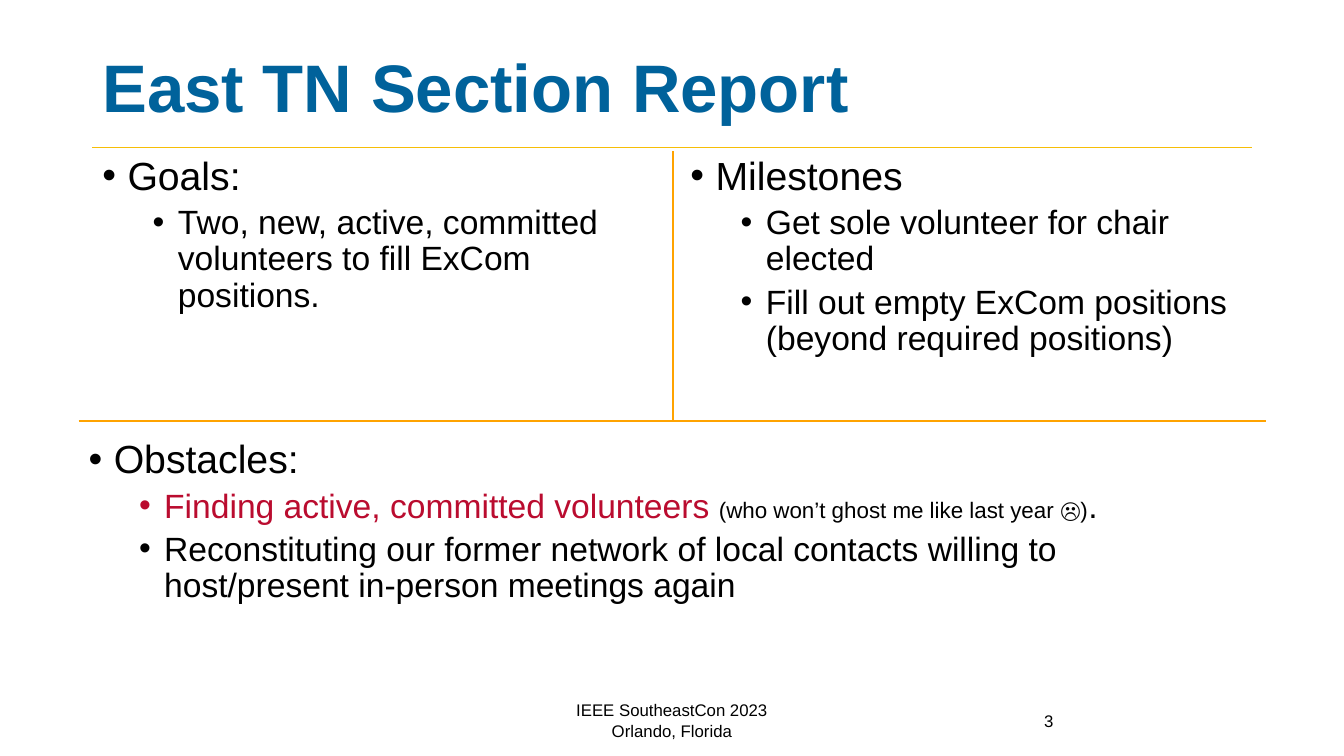
import dataclasses

import lxml.etree
import pptx
import pptx.dml.color
import pptx.enum.shapes
import pptx.enum.text
import pptx.oxml.ns
import pptx.util

EMU_PER_PX = 9525  # 96 px to the inch
ALIGN = pptx.enum.text.PP_ALIGN
ANCHOR = pptx.enum.text.MSO_ANCHOR


@dataclasses.dataclass(frozen=True)
class Theme:
    font: str = "Arial"
    title_color: str = "00629B"
    text_color: str = "000000"
    alert_color: str = "BA0C2F"
    title_rule: str = "F6BE07"
    divider: str = "FFA300"
    title_size: int = 48
    heading_size: int = 28
    item_size: int = 24
    aside_size: int = 16
    footer_size: int = 12


def px(length):
    return pptx.util.Emu(length * EMU_PER_PX)


def apply(target, values):
    for name, value in values.items():
        setattr(target, name, value)


class ReportSlide:
    def __init__(self, deck, theme):
        self.theme = theme
        self.slide = deck.slides.add_slide(deck.slide_layouts[5])

    def add_run(self, paragraph, text, size, color=None, bold=False):
        run = paragraph.add_run()
        run.text = text
        apply(run.font, {"name": self.theme.font, "size": pptx.util.Pt(size), "bold": bold})
        run.font.color.rgb = pptx.dml.color.RGBColor.from_string(color or self.theme.text_color)

    def title(self, text, left, top, width, height):
        heading = self.slide.shapes.title
        apply(heading, {"left": px(left), "top": px(top), "width": px(width), "height": px(height)})
        apply(heading.text_frame, {"word_wrap": True, "vertical_anchor": ANCHOR.MIDDLE,
                                   "auto_size": pptx.enum.text.MSO_AUTO_SIZE.NONE})
        line = heading.text_frame.paragraphs[0]
        apply(line, {"alignment": ALIGN.LEFT, "line_spacing": 0.9})
        self.add_run(line, text, self.theme.title_size, self.theme.title_color, bold=True)

    def text_frame(self, left, top, width, height, anchor):
        frame = self.slide.shapes.add_textbox(px(left), px(top), px(width), px(height)).text_frame
        apply(frame, {"word_wrap": True, "vertical_anchor": anchor})
        return frame

    def bullet(self, paragraph, level):
        properties = paragraph._p.get_or_add_pPr()
        properties.set("marL", str(px(24 + 48 * level)))
        properties.set("indent", str(px(-24)))
        for tag, key, value in (("a:buFont", "typeface", self.theme.font), ("a:buChar", "char", "•")):
            lxml.etree.SubElement(properties, pptx.oxml.ns.qn(tag)).set(key, value)
        apply(paragraph, {"level": level, "line_spacing": 0.9})

    def topic(self, heading, items, left, top, width, height):
        """Add a bulleted heading; each item is a list of (text, size, color) runs."""
        frame = self.text_frame(left, top, width, height, ANCHOR.TOP)
        first = frame.paragraphs[0]
        self.bullet(first, 0)
        self.add_run(first, heading, self.theme.heading_size)
        for runs in items:
            item = frame.add_paragraph()
            self.bullet(item, 1)
            item.space_before = pptx.util.Pt(5)
            for run in runs:
                self.add_run(item, *run)

    def footer(self, lines, left, top, width, height, alignment):
        frame = self.text_frame(left, top, width, height, ANCHOR.MIDDLE)
        for index, text in enumerate(lines):
            line = frame.add_paragraph() if index else frame.paragraphs[0]
            line.alignment = alignment
            self.add_run(line, text, self.theme.footer_size)

    def rule(self, x1, y1, x2, y2, color, weight):
        rule = self.slide.shapes.add_connector(
            pptx.enum.shapes.MSO_CONNECTOR.STRAIGHT, px(x1), px(y1), px(x2), px(y2))
        rule.line.color.rgb = pptx.dml.color.RGBColor.from_string(color)
        rule.line.width = pptx.util.Pt(weight)
        lxml.etree.SubElement(rule._element.spPr, pptx.oxml.ns.qn("a:effectLst"))


def main():
    deck = pptx.Presentation()
    apply(deck, {"slide_width": px(1280), "slide_height": px(720)})
    theme = Theme()
    report = ReportSlide(deck, theme)
    item = theme.item_size

    report.rule(88, 140, 1192, 140, theme.title_rule, 0.5)
    report.title("East TN Section Report", 88, 38, 985, 96)
    report.topic("Goals:", [
        [("Two, new, active, committed volunteers to fill ExCom positions.", item)],
    ], 88, 144, 544, 216)
    report.topic("Milestones", [
        [("Get sole volunteer for chair elected", item)],
        [("Fill out empty ExCom positions (beyond required positions)", item)],
    ], 648, 144, 544, 233)
    report.topic("Obstacles:", [
        [("Finding active, committed volunteers ", item, theme.alert_color),
         ("(who won’t ghost me like last year ☹)", theme.aside_size),
         (".", item)],
        [("Reconstituting our former network of local contacts willing to "
          "host/present in-person meetings again", item)],
    ], 75, 414, 1117, 216)
    report.footer(["IEEE SoutheastCon 2023", "Orlando, Florida"], 424, 667, 432, 38, ALIGN.CENTER)
    report.footer(["3"], 985, 667, 207, 38, ALIGN.LEFT)
    report.rule(641, 144, 641, 401, theme.divider, 1)
    report.rule(75, 401, 1206, 401, theme.divider, 1)

    deck.save("out.pptx")


if __name__ == "__main__":
    main()
